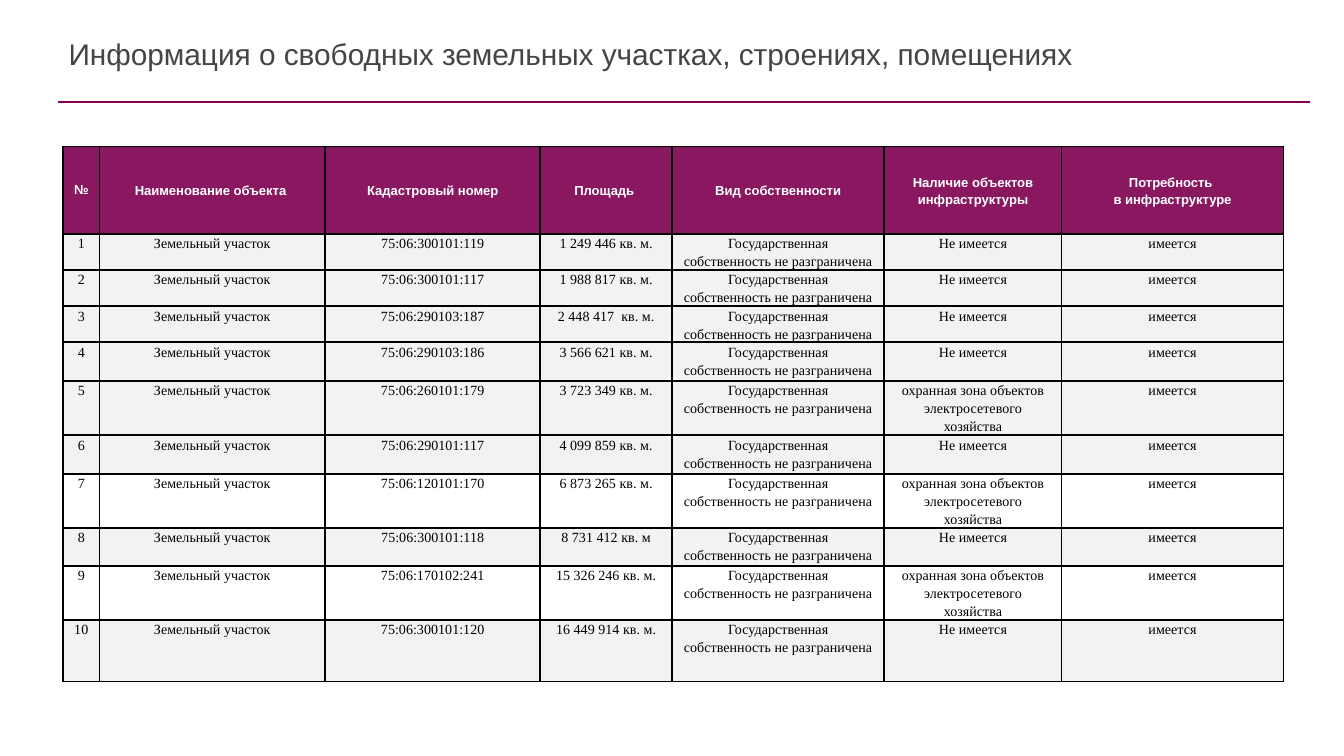
from lxml.etree import SubElement
from pptx import Presentation
from pptx.dml.color import RGBColor
from pptx.enum.shapes import MSO_CONNECTOR
from pptx.enum.text import MSO_ANCHOR, MSO_AUTO_SIZE, PP_ALIGN
from pptx.oxml import parse_xml
from pptx.oxml.ns import nsdecls, qn
from pptx.util import Inches, Pt

PLUM = RGBColor(0x89, 0x18, 0x61)
RULE = RGBColor(0x83, 0x00, 0x51)
GRAPHITE = RGBColor(0x45, 0x45, 0x45)
PALE = RGBColor(0xF2, 0xF2, 0xF2)
WHITE = RGBColor(0xFF, 0xFF, 0xFF)
BLACK = RGBColor(0, 0, 0)

COLUMN_WIDTHS = [0.27, 1.68, 1.6, 0.98, 1.58, 1.32, 1.65]
ROW_HEIGHTS = [0.65, 0.27, 0.26, 0.23, 0.29, 0.26, 0.29, 0.28, 0.28, 0.26, 0.46]
WHITE_ROWS = {7, 9}

HEADERS = ["№", "Наименование объекта ", "Кадастровый номер", "Площадь ",
           "Вид собственности", "Наличие объектов инфраструктуры",
           "Потребность \nв инфраструктуре"]
OWNERSHIP = "Государственная\vсобственность не разграничена"
NONE = "Не имеется"
GUARD_ZONE = "охранная зона объектов электросетевого хозяйства"
PLOTS = [
    ("75:06:300101:119", "1 249 446 кв. м.", NONE),
    ("75:06:300101:117", "1 988 817 кв. м.", NONE),
    ("75:06:290103:187", "2 448 417  кв. м.", NONE),
    ("75:06:290103:186", "3 566 621 кв. м.", NONE),
    ("75:06:260101:179", "3 723 349 кв. м.", GUARD_ZONE),
    ("75:06:290101:117", "4 099 859 кв. м.", NONE),
    ("75:06:120101:170", "6 873 265 кв. м.", GUARD_ZONE),
    ("75:06:300101:118", "8 731 412 кв. м", NONE),
    ("75:06:170102:241", "15 326 246 кв. м.", GUARD_ZONE),
    ("75:06:300101:120", "16 449 914 кв. м.", NONE),
]
rows = [HEADERS] + [
    [str(number), "Земельный участок", cadastre, area, OWNERSHIP, facilities, "имеется"]
    for number, (cadastre, area, facilities) in enumerate(PLOTS, 1)
]


def add_borders(cell):
    properties = cell._tc.get_or_add_tcPr()
    for side in ("lnL", "lnR", "lnT", "lnB"):
        properties.append(parse_xml(
            f'<a:{side} {nsdecls("a")} w="{Pt(1)}"><a:solidFill>'
            f'<a:srgbClr val="{BLACK}"/></a:solidFill></a:{side}>'))


deck = Presentation()
deck.slide_width = Inches(10)
deck.slide_height = deck.slide_width * 9 // 16
page = deck.slides.add_slide(deck.slide_layouts[5])

rule = page.shapes.add_connector(
    MSO_CONNECTOR.STRAIGHT, Inches(9.75), Inches(0.76), Inches(0.43), Inches(0.76))
rule.line.color.rgb = RULE
rule.line.width = Pt(0.75)
SubElement(rule._element.spPr, qn("a:effectLst"))

title = page.shapes.title
title.left, title.top = Inches(0.51), Inches(0.26)
title.width, title.height = Inches(9), Inches(0.28)
frame = title.text_frame
frame.text = "Информация о свободных земельных участках, строениях, помещениях"
frame.auto_size = MSO_AUTO_SIZE.NONE
frame.vertical_anchor = MSO_ANCHOR.MIDDLE
frame.margin_left = frame.margin_right = frame.margin_top = frame.margin_bottom = 0
para = frame.paragraphs[0]
para.alignment = PP_ALIGN.LEFT
font = para.runs[0].font
font.name, font.size, font.color.rgb = "Arial", Pt(16), GRAPHITE

table_box = page.shapes.add_table(
    len(rows), len(HEADERS), Inches(0.47), Inches(1.09), Inches(9.08), Inches(4.13))
table = table_box.table
for column, width in zip(table.columns, COLUMN_WIDTHS):
    column.width = Inches(width)
for row, height in zip(table.rows, ROW_HEIGHTS):
    row.height = Inches(height)
table_box.height = Inches(4.13)

for row_index, texts in enumerate(rows):
    is_header = row_index == 0
    for column_index, text in enumerate(texts):
        is_number_sign = is_header and column_index == 0
        cell = table.cell(row_index, column_index)
        add_borders(cell)
        cell.fill.solid()
        cell.fill.fore_color.rgb = (
            PLUM if is_header else WHITE if row_index in WHITE_ROWS else PALE)
        cell.margin_left = cell.margin_right = Inches(0.03 if is_number_sign else 0.07)
        cell.margin_top = cell.margin_bottom = 0
        cell.vertical_anchor = MSO_ANCHOR.MIDDLE if is_header else MSO_ANCHOR.TOP
        cell.text_frame.text = text
        for para in cell.text_frame.paragraphs:
            para.alignment = PP_ALIGN.CENTER
            if not is_number_sign:
                para.line_spacing = 1.15
            for span in para.runs:
                font = span.font
                font.name = "Arial" if is_header else "Times New Roman"
                font.size = Pt(7 if is_header else 7.5)
                font.bold = is_header
                font.color.rgb = WHITE if is_header else BLACK

deck.save("out.pptx")
